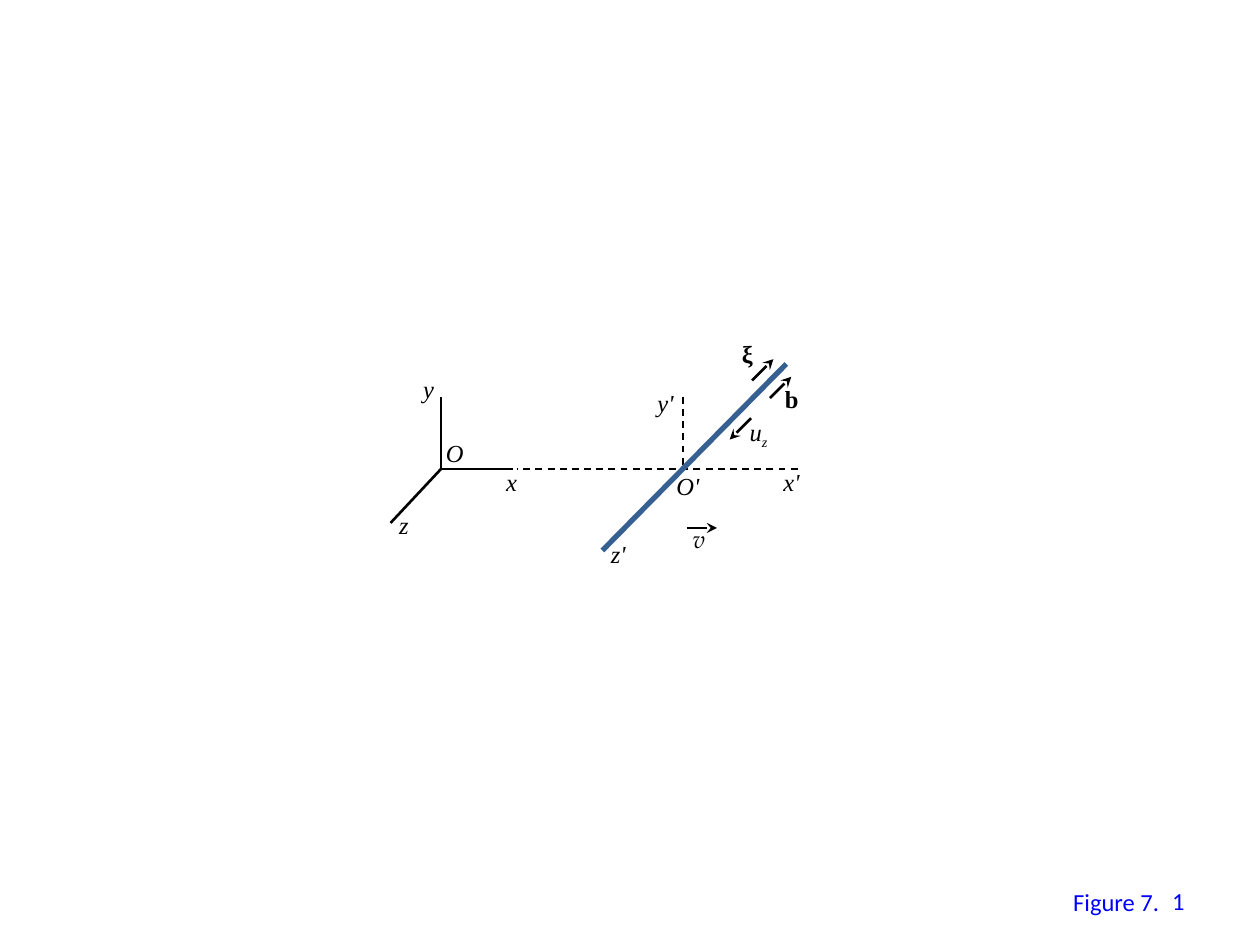
"""Build the slide with a rest frame and a moving frame that holds a rod along z'."""
from lxml.etree import SubElement
from pptx import Presentation
from pptx.dml.color import RGBColor
from pptx.enum.dml import MSO_LINE
from pptx.enum.shapes import MSO_CONNECTOR
from pptx.enum.text import MSO_ANCHOR, MSO_AUTO_SIZE, PP_ALIGN
from pptx.oxml.ns import qn
from pptx.util import Pt

COLORS = {"ink": "000000", "rod": "376092", "footer": "0000FF"}
SERIF, SANS, VELOCITY = "Times New Roman", "Calibri", "TeX Gyre Pagella"


class Diagram:
    """Hold the text style and the slide being drawn."""

    def __init__(self, slide, size=14):
        self.slide = slide
        self.size = size

    def line(self, start, end, color="ink", width=1.5, dashed=False, arrow=False):
        """Draw a straight line, optionally dashed or with an arrowhead."""
        connector = self.slide.shapes.add_connector(
            MSO_CONNECTOR.STRAIGHT, *map(Pt, start + end))
        connector.line.color.rgb = RGBColor.from_string(COLORS[color])
        connector.line.width = Pt(width)
        if dashed:
            connector.line.dash_style = MSO_LINE.DASH
        if arrow:
            SubElement(connector.line._get_or_add_ln(), qn("a:tailEnd"), type="stealth")
        SubElement(connector._element.spPr, qn("a:effectLst"))

    def text(self, words, left, top, width, height=24.5, font=SERIF, color="ink",
             bold=False, italic=False, subscript=""):
        """Place a one-line text box and return its frame."""
        box = self.slide.shapes.add_textbox(*map(Pt, (left, top, width, height)))
        frame = box.text_frame
        frame.word_wrap = False
        frame.auto_size = MSO_AUTO_SIZE.SHAPE_TO_FIT_TEXT
        paragraph = frame.paragraphs[0]
        paragraph.font.name = font
        paragraph.font.size = Pt(self.size)
        paragraph.font.bold = bold
        paragraph.font.italic = italic
        paragraph.font.color.rgb = RGBColor.from_string(COLORS[color])
        paragraph.add_run().text = words
        if subscript:
            index = paragraph.add_run()
            index.text = subscript
            index._r.get_or_add_rPr().set("baseline", "-25000")
        return frame

    def page_number(self, number, left, top, width, height):
        """Place the page number, right-aligned and centred in height."""
        frame = self.text(number, left, top, width, height, SANS, "footer")
        frame.auto_size = MSO_AUTO_SIZE.NONE
        frame.word_wrap = True
        frame.vertical_anchor = MSO_ANCHOR.MIDDLE
        frame.paragraphs[0].alignment = PP_ALIGN.RIGHT


def main():
    """Draw both frames, the vectors, the labels and the footer."""
    deck = Presentation()
    deck.slide_width, deck.slide_height = Pt(720), Pt(540)
    diagram = Diagram(deck.slides.add_slide(deck.slide_layouts[6]))

    diagram.text("Figure 7.", 606.2, 503.3, 64, font=SANS, color="footer")

    origin, moving_origin = (252, 268), (390.2, 268)
    for axis_end in ((293, 268), (252, 226.8), (223.2, 298.8)):
        diagram.line(origin, axis_end)
    diagram.line((455.8, 268), (295.2, 268), width=1, dashed=True)
    diagram.line((390.2, 226.8), moving_origin, width=1, dashed=True)

    for tail, head in (
        ((392.4, 301.7), (409.7, 301.7)),
        ((429.2, 239), (417, 251.2)),
        ((429.8, 217.4), (442, 205.2)),
        ((440, 227.5), (452.2, 215.3)),
    ):
        diagram.line(tail, head, arrow=True)

    for name, left, top, width in (
        ("x", 282.2, 263.5, 24.5),
        ("y", 234.7, 210.2, 24.5),
        ("z", 221, 288, 24),
        ("O", 247.7, 247, 29),
        ("z'", 342, 304.6, 27.4),
        ("y'", 368.6, 218.2, 29),
        ("x'", 440.6, 263.5, 29),
        ("O'", 379.4, 265.7, 32.4),
    ):
        diagram.text(name, left, top, width, italic=True)
    diagram.text("v", 388.8, 296, 25.2, font=VELOCITY, italic=True)
    diagram.text("u", 421.2, 234.7, 29, italic=True, subscript="z")
    diagram.text("b", 441.4, 216, 22.3, bold=True)
    diagram.text("ξ", 416.9, 190, 21.6, bold=True)

    diagram.line((449.3, 208), (344.2, 314.6), color="rod", width=3)
    diagram.page_number("1", 516.2, 500.4, 167.8, 28.8)
    deck.save("out.pptx")


if __name__ == "__main__":
    main()
